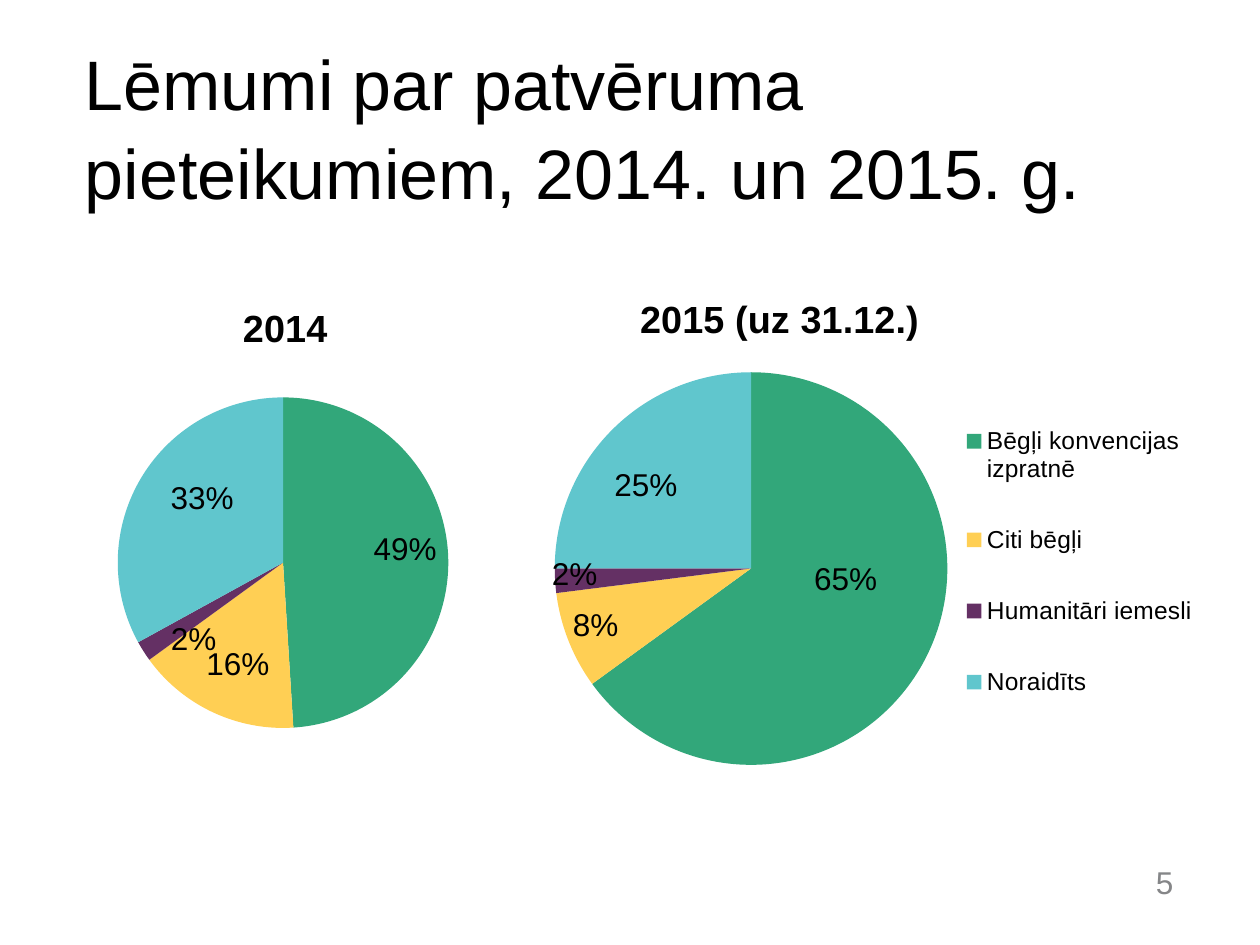
from lxml import etree
from pptx import Presentation
from pptx import util as u
from pptx.chart.data import CategoryChartData
from pptx.dml.color import RGBColor
from pptx.enum import chart as charts, text
from pptx.oxml import parse_xml
from pptx.oxml.ns import nsdecls, qn

Pt = u.Pt
FONT = "Arial"
COLORS = {"text": "000000", "number": "858688", "refugee": "32A77A",
          "other": "FFCF54", "humanitarian": "643064", "rejected": "60C6CD"}
SLICES = ["refugee", "other", "humanitarian", "rejected"]
DECISIONS = ["Bēgļi konvencijas izpratnē", "Citi bēgļi",
             "Humanitāri iemesli", "Noraidīts"]


def set_font(font, size, color="text", bold=False):
    font.name, font.size, font.bold = FONT, Pt(size), bold
    font.color.rgb = RGBColor.from_string(COLORS[color])


def add_text(slide, box, words, size, color="text", anchor="TOP", align="LEFT", spacing=1):
    frame = slide.shapes.add_textbox(*map(Pt, box)).text_frame
    frame.word_wrap = True
    frame.margin_left = frame.margin_right = frame.margin_top = frame.margin_bottom = 0
    frame.vertical_anchor = text.MSO_ANCHOR[anchor]
    paragraph = frame.paragraphs[0]
    paragraph.text = words
    paragraph.alignment = text.PP_ALIGN[align]
    paragraph.line_spacing = spacing
    set_font(paragraph.font, size, color)


def layout_xml(inner=False, **fractions):
    """Manual layout from x, y, w and h as fractions of the chart."""
    modes = "" if "offset" in fractions else '<c:xMode val="edge"/><c:yMode val="edge"/>'
    target = '<c:layoutTarget val="inner"/>' if inner else ""
    sizes = "".join(f'<c:{key} val="{fractions[key]}"/>' for key in "xywh" if key in fractions)
    return parse_xml(f'<c:layout {nsdecls("c")}><c:manualLayout>{target}{modes}{sizes}'
                     '</c:manualLayout></c:layout>')


def place(element, layout, after=None):
    """Give a chart part its layout, after the named child or as its first."""
    for old in element.findall(qn("c:layout")):
        element.remove(old)
    previous = element.find(qn(after)) if after else None
    if previous is None:
        element.insert(0, layout)
    else:
        previous.addnext(layout)


def add_percent_labels(series, offsets):
    labels = series.data_labels
    set_font(labels.font, 18)
    labels.show_percentage, labels.show_value = True, False
    labels.show_leader_lines = False
    labels.position = charts.XL_LABEL_POSITION.CENTER
    for index, (x, y) in enumerate(offsets):
        label = series.points[index].data_label
        set_font(label.font, 18)
        label.position = charts.XL_LABEL_POSITION.CENTER
        element = series.points[index].data_label._get_or_add_dLbl()
        element.find(qn("c:showVal")).set("val", "0")
        element.find(qn("c:showPercent")).set("val", "1")
        place(element, layout_xml(x=x, y=y, offset=True), "c:idx")


def add_pie(slide, box, title, values, plot, title_at, offsets, categories, legend=None):
    data = CategoryChartData()
    data.categories = categories
    data.add_series("Series 1", values)
    chart = slide.shapes.add_chart(charts.XL_CHART_TYPE.PIE, *map(Pt, box), data).chart
    set_font(chart.font, 18)

    # Title
    chart.has_title = True
    frame = chart.chart_title.text_frame
    frame.text = title
    set_font(frame.paragraphs[0].runs[0].font, 21.6, bold=True)
    chart.chart_title.include_in_layout = False
    place(chart.chart_title._element, layout_xml(x=title_at[0], y=title_at[1]), "c:tx")

    # Slices
    pie = chart.plots[0]
    pie.vary_by_categories = True
    series = pie.series[0]
    for index, name in enumerate(SLICES):
        fill = series.points[index].format.fill
        fill.solid()
        fill.fore_color.rgb = RGBColor.from_string(COLORS[name])
    add_percent_labels(series, offsets)
    plot_area = chart._chartSpace.chart.plotArea
    place(plot_area, layout_xml(inner=True, **dict(zip("xywh", plot))))

    # Legend
    chart.has_legend = legend is not None
    if legend:
        chart.legend.position = charts.XL_LEGEND_POSITION.RIGHT
        chart.legend.include_in_layout = False
        set_font(chart.legend.font, 14)
        place(chart.legend._element, layout_xml(**dict(zip("xywh", legend))), "c:legendPos")


def main():
    presentation = Presentation()
    presentation.slide_width, presentation.slide_height = Pt(720), Pt(540)
    slide = presentation.slides.add_slide(presentation.slide_layouts[6])

    add_text(slide, (48.5, 21, 620.5, 97), "Lēmumi par patvēruma pieteikumiem, 2014. un 2015. g.",
             40, spacing=1.05)
    add_pie(slide, (25, 151, 282, 313), "2014", (49, 16, 2, 33),
            plot=(0.15, 0.24, 0.67, 0.61), title_at=(0.39, 0.06),
            offsets=[(0.08, -0.02), (-0.02, 0.05), (-0.04, 0.06), (-0.02, -0.04)],
            categories=["1", "2", "3", "4"])
    add_pie(slide, (292.5, 106, 408, 391), "2015 (uz 31.12.)", (65, 8, 2, 25),
            plot=(0.06, 0.27, 0.55, 0.58), title_at=(0.17, 0.15),
            offsets=[(0.01, -0.05), (-0.09, 0.03), (-0.11, 0), (-0.05, -0.02)],
            categories=DECISIONS, legend=(0.63, 0.29, 0.33, 0.52))
    add_text(slide, (502.5, 493, 168, 22), "5", 18, "number", "MIDDLE", "RIGHT")
    presentation.save("out.pptx")


if __name__ == "__main__":
    main()
